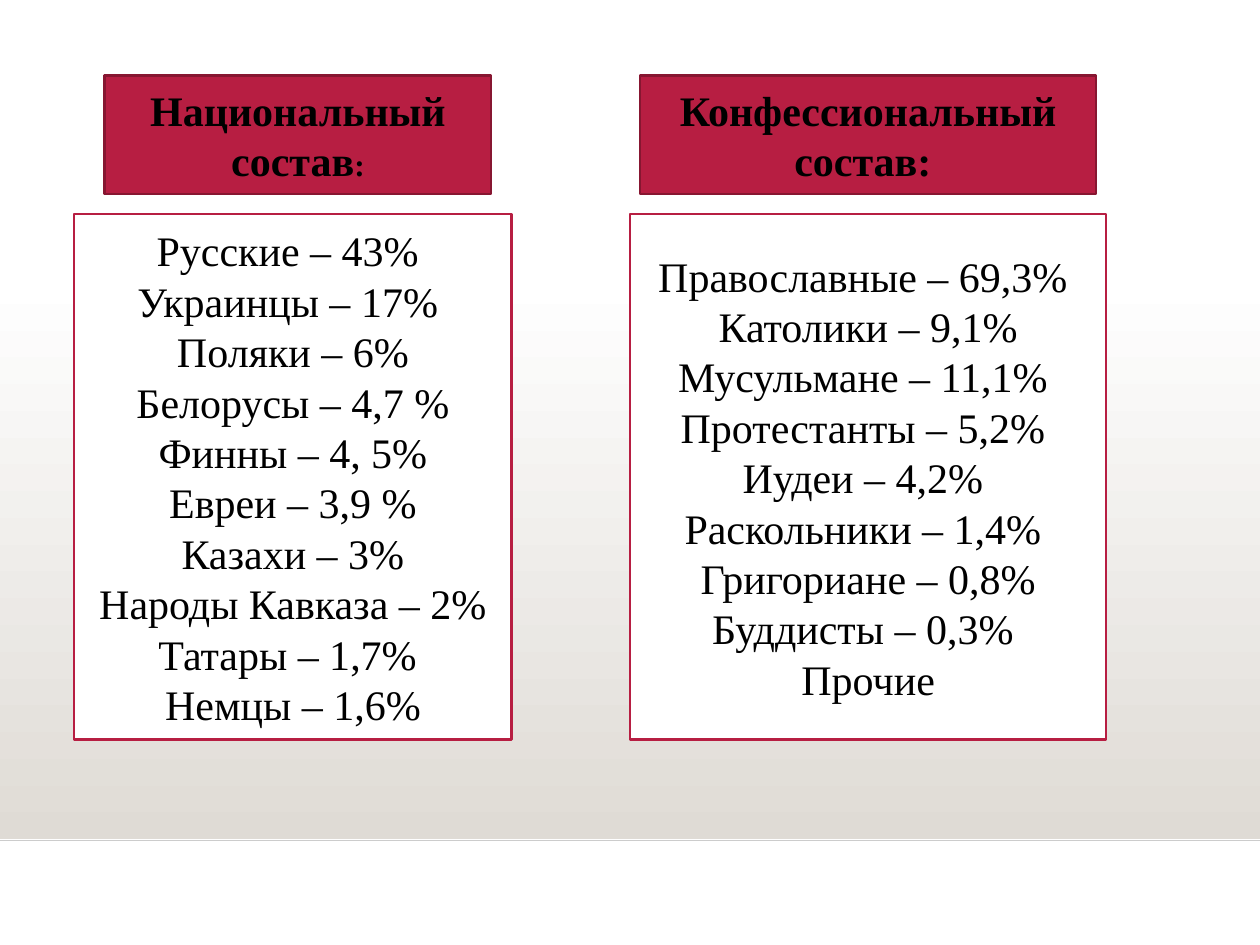
from dataclasses import dataclass

from lxml.etree import SubElement
from pptx import Presentation
from pptx.dml.color import RGBColor
from pptx.enum.shapes import MSO_CONNECTOR, MSO_SHAPE
from pptx.enum.text import MSO_ANCHOR, PP_ALIGN
from pptx.oxml.ns import qn
from pptx.util import Inches, Pt


@dataclass(frozen=True)
class Theme:
    font: str = "Times New Roman"
    size: int = 24
    small: int = 18
    text: str = "000000"
    paper: str = "FFFFFF"
    accent: str = "B71E42"
    edge: str = "871631"
    shade: str = "DFDBD5"
    rule: str = "CCCCCC"
    width: float = 1.25


THEME = Theme()
HEAD_TOP, HEAD_TALL = 0.6, 0.94
LIST_TOP, LIST_TALL = 1.7, 4.17

NATIONS = [
    "Русские – 43% ", "Украинцы – 17% ", "Поляки – 6%", "Белорусы – 4,7 %",
    "Финны – 4, 5%", "Евреи – 3,9 %", "Казахи – 3%", "Народы Кавказа – 2%",
    "Татары – 1,7% ", "Немцы – 1,6%",
]
FAITHS = [
    "Православные – 69,3% ", "Католики – 9,1%", "Мусульмане – 11,1% ",
    "Протестанты – 5,2% ", "Иудеи – 4,2% ", "Раскольники – 1,4% ",
    "Григориане – 0,8%", "Буддисты – 0,3% ", "Прочие",
]


def rgb(code):
    return RGBColor.from_string(code)


def add_rect(slide, left, top, width, height):
    rect = slide.shapes.add_shape(
        MSO_SHAPE.RECTANGLE,
        Inches(left), Inches(top), Inches(width), Inches(height))
    rect.shadow.inherit = False
    return rect


def add_floor(slide):
    """Shade the lower part of the slide and rule it off."""
    floor = add_rect(slide, 0, 2.2, 10, 4.46)
    floor.line.fill.background()
    floor.fill.gradient()
    floor.fill.gradient_angle = 270
    for stop, code in zip(floor.fill.gradient_stops, (THEME.paper, THEME.shade)):
        stop.color.rgb = rgb(code)

    rule = slide.shapes.add_connector(
        MSO_CONNECTOR.STRAIGHT, Inches(0), Inches(6.67), Inches(10), Inches(6.67))
    rule.line.color.rgb = rgb(THEME.rule)
    rule.line.width = Pt(1)
    SubElement(rule.element.spPr, qn("a:effectLst"))


def add_run(para, text, size, bold):
    run = para.add_run()
    run.text = text
    font = run.font
    font.name, font.size, font.bold = THEME.font, Pt(size), bold
    font.color.rgb = rgb(THEME.text)


def add_panel(slide, place, fill, edge, rows, bold=False):
    """Draw a framed box; each row is a list of (text, size) runs."""
    panel = add_rect(slide, *place)
    panel.fill.solid()
    panel.fill.fore_color.rgb = rgb(fill)
    panel.line.color.rgb = rgb(edge)
    panel.line.width = Pt(THEME.width)
    frame = panel.text_frame
    frame.word_wrap = True
    frame.vertical_anchor = MSO_ANCHOR.MIDDLE
    for i, row in enumerate(rows):
        para = frame.add_paragraph() if i else frame.paragraphs[0]
        para.alignment = PP_ALIGN.CENTER
        for text, size in row:
            add_run(para, text, size, bold)


def add_head(slide, left, width, runs):
    add_panel(slide, (left, HEAD_TOP, width, HEAD_TALL),
              THEME.accent, THEME.edge, [runs], bold=True)


def add_list(slide, left, width, items):
    add_panel(slide, (left, LIST_TOP, width, LIST_TALL),
              THEME.paper, THEME.accent, [[(item, THEME.size)] for item in items])


def main():
    deck = Presentation()
    deck.slide_width, deck.slide_height = Inches(10), Inches(7.5)
    slide = deck.slides.add_slide(deck.slide_layouts[6])
    add_floor(slide)
    add_head(slide, 0.83, 3.07,
             [("Национальный состав", THEME.size), (":", THEME.small)])
    add_list(slide, 0.59, 3.47, NATIONS)
    add_head(slide, 5.08, 3.62, [("Конфессиональный состав: ", THEME.size)])
    add_list(slide, 5, 3.78, FAITHS)
    deck.save("out.pptx")


if __name__ == "__main__":
    main()
